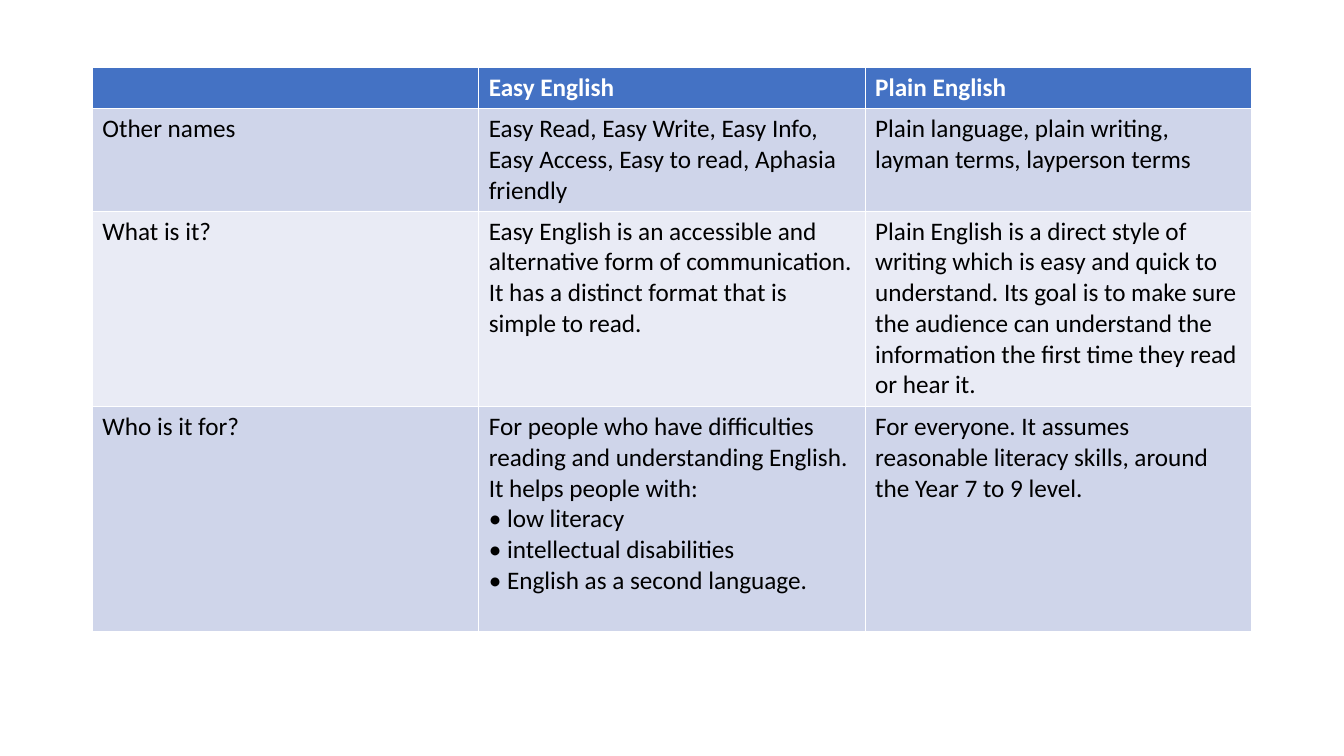
from pptx import Presentation
from pptx.dml.color import RGBColor
from pptx.util import Pt

HEADER_FILL = "4472C4"
BAND_FILLS = ["E9EBF5", "CFD5EA"]
COLUMN_WIDTH = 276
ROW_HEIGHTS = [29.2, 72.5, 139.5, 160.5]
ROWS = [
    ["", "Easy English", "Plain English"],
    ["Other names",
     "Easy Read, Easy Write, Easy Info, Easy Access, Easy to read, Aphasia friendly",
     "Plain language, plain writing, layman terms, layperson terms"],
    ["What is it?",
     "Easy English is an accessible and alternative form of communication. "
     "It has a distinct format that is simple to read.",
     "Plain English is a direct style of writing which is easy and quick to understand. "
     "Its goal is to make sure the audience can understand the information "
     "the first time they read or hear it."],
    ["Who is it for?",
     "For people who have difficulties reading and understanding English. "
     "It helps people with:\n"
     "• low literacy\n"
     "• intellectual disabilities\n"
     "• English as a second language.",
     "For everyone. It assumes reasonable literacy skills, around the Year 7 to 9 level."],
]


def color(value):
    return RGBColor.from_string(value)


def fill_cell(cell, content, fill, ink, bold):
    cell.fill.solid()
    cell.fill.fore_color.rgb = color(fill)
    cell.text = content
    font_values = {"name": "Calibri", "size": Pt(18), "bold": bold}
    for para in cell.text_frame.paragraphs:
        for name, value in font_values.items():
            setattr(para.font, name, value)
        for span in para.runs:
            for name, value in font_values.items():
                setattr(span.font, name, value)
            span.font.color.rgb = color(ink)


def add_comparison_table(page, left, top):
    """Add the table; its default style supplies the white rules between cells."""
    column_count = len(ROWS[0])
    table = page.shapes.add_table(
        len(ROWS), column_count, Pt(left), Pt(top),
        Pt(COLUMN_WIDTH * column_count), Pt(sum(ROW_HEIGHTS))).table
    for column in table.columns:
        column.width = Pt(COLUMN_WIDTH)
    for index, (height, contents) in enumerate(zip(ROW_HEIGHTS, ROWS)):
        table.rows[index].height = Pt(height)
        header = index == 0
        fill = HEADER_FILL if header else BAND_FILLS[index % 2]
        ink = "FFFFFF" if header else "000000"
        for cell, content in zip(table.rows[index].cells, contents):
            fill_cell(cell, content, fill, ink, header)


def main():
    deck = Presentation()
    deck.slide_width, deck.slide_height = Pt(960), Pt(540)
    page = deck.slides.add_slide(deck.slide_layouts[6])
    add_comparison_table(page, 66, 48.5)
    deck.save("out.pptx")


if __name__ == "__main__":
    main()
